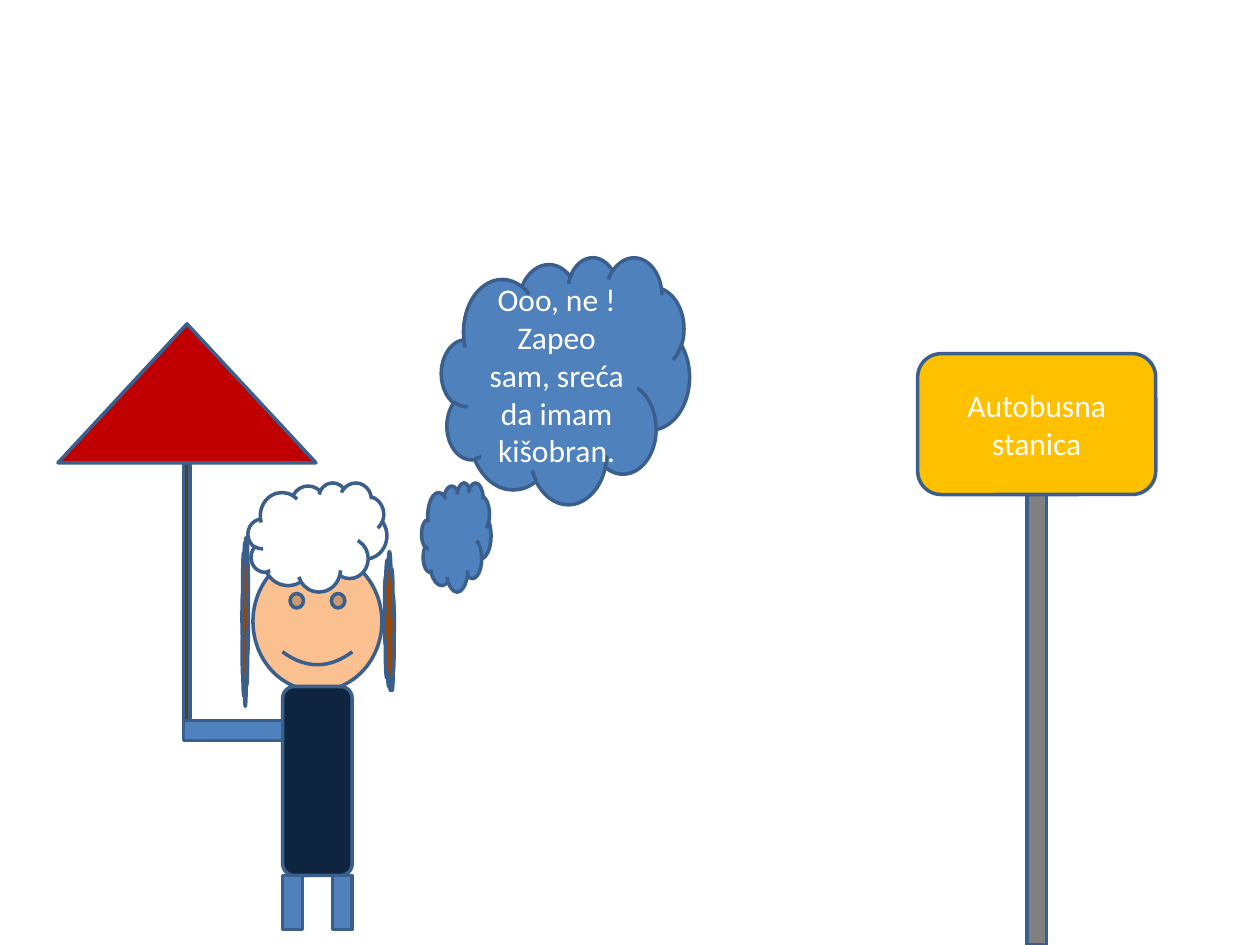
from pptx import Presentation
from pptx.dml.color import RGBColor
from pptx.enum.shapes import MSO_SHAPE
from pptx.enum.text import MSO_ANCHOR, PP_ALIGN
from pptx.util import Cm, Pt

RECT = MSO_SHAPE.RECTANGLE
ROUNDED = MSO_SHAPE.ROUNDED_RECTANGLE
CLOUD = MSO_SHAPE.CLOUD
SMILEY = MSO_SHAPE.SMILEY_FACE
TRIANGLE = MSO_SHAPE.ISOSCELES_TRIANGLE
CENTER = PP_ALIGN.CENTER
MIDDLE = MSO_ANCHOR.MIDDLE

WHITE = RGBColor(0xFF, 0xFF, 0xFF)
OUTLINE = RGBColor(0x3A, 0x5F, 0x8C)
BLUE = RGBColor(0x4F, 0x81, 0xBD)
NAVY = RGBColor(0x0F, 0x24, 0x3E)
GREY = RGBColor(0x80, 0x80, 0x80)
YELLOW = RGBColor(0xFF, 0xC0, 0x00)
SKIN = RGBColor(0xFA, 0xC0, 0x90)
BROWN = RGBColor(0x98, 0x48, 0x07)
OLIVE = RGBColor(0x4A, 0x45, 0x2A)
RED = RGBColor(0xC0, 0x00, 0x00)


def write_text(sp, text, font="Calibri", size=18, color=WHITE, align=CENTER):
    tf = sp.text_frame
    tf.word_wrap = True
    tf.vertical_anchor = MIDDLE
    p = tf.paragraphs[0]
    p.alignment = align
    r = p.add_run()
    r.text = text
    r.font.name = font
    r.font.size = Pt(size)
    r.font.color.rgb = color


class Drawing:
    """Holds the outline style and the current slide."""

    def __init__(self, slide, line_color=OUTLINE, line_width=2):
        self.slide = slide
        self.line_color = line_color
        self.line_width = Pt(line_width)

    def shape(self, kind, left, top, width, height, fill):
        sp = self.slide.shapes.add_shape(
            kind, Cm(left), Cm(top), Cm(width), Cm(height))
        sp.shadow.inherit = False
        sp.fill.solid()
        sp.fill.fore_color.rgb = fill
        sp.line.color.rgb = self.line_color
        sp.line.width = self.line_width
        return sp

    def flipped(self, *args):
        sp = self.shape(*args)
        sp._element.spPr.xfrm.set("flipV", "1")
        return sp

    def label(self, text, *args):
        sp = self.shape(*args)
        write_text(sp, text)
        return sp


def main():
    prs = Presentation()
    prs.slide_width = Cm(25.4)
    prs.slide_height = Cm(19.05)
    d = Drawing(prs.slides.add_slide(prs.slide_layouts[6]))

    # Bus stop
    d.shape(RECT, 20.7, 9.95, 0.4, 9.1, GREY)
    d.label("Autobusna stanica", ROUNDED, 18.5, 7.13, 4.8, 2.84, YELLOW)

    # Head and hair
    d.shape(SMILEY, 5.1, 11.13, 2.6, 2.8, SKIN)
    d.shape(CLOUD, 5, 9.73, 2.8, 2.2, WHITE)
    d.shape(CLOUD, 4.88, 10.83, 0.13, 3.4, BROWN)
    d.flipped(CLOUD, 7.75, 11.13, 0.2, 2.8, BROWN)

    # Body and legs
    d.shape(ROUNDED, 5.7, 13.84, 1.4, 3.81, NAVY)
    for left in (5.7, 6.7):
        d.shape(RECT, left, 17.65, 0.4, 1.09, BLUE)

    # Thought clouds
    d.label("Ooo, ne ! Zapeo sam, sreća da imam kišobran.",
            CLOUD, 8.9, 5.18, 5, 4.98, BLUE)
    d.shape(CLOUD, 8.5, 9.73, 1.4, 2.2, BLUE)

    # Arm and umbrella
    d.shape(RECT, 3.7, 14.53, 2, 0.4, BLUE)
    d.shape(RECT, 3.7, 9.33, 0.13, 5.2, OLIVE)
    d.shape(TRIANGLE, 1.17, 6.53, 5.2, 2.8, RED)

    prs.save("out.pptx")


if __name__ == "__main__":
    main()
